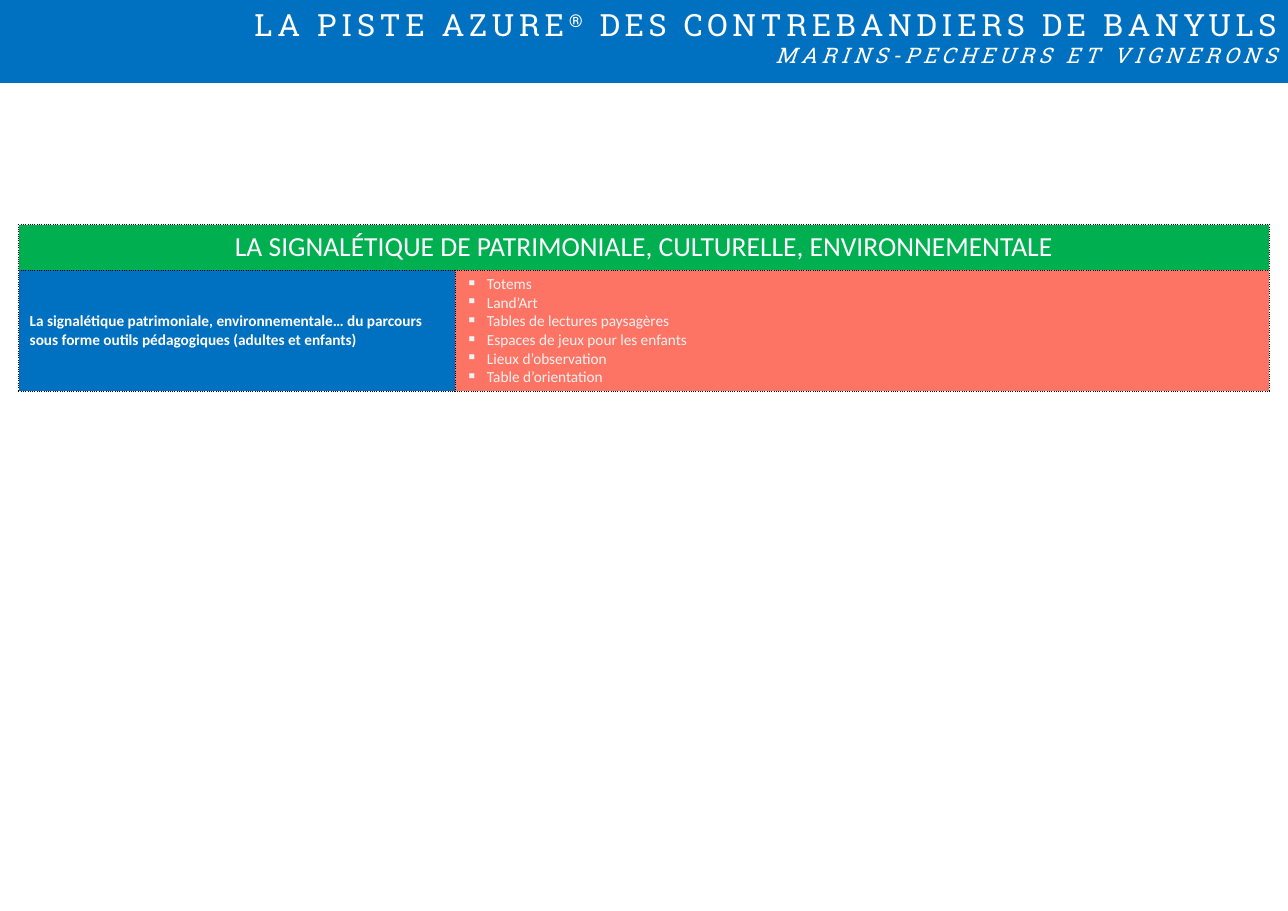
from dataclasses import dataclass

from lxml.etree import SubElement
from pptx import Presentation
from pptx.dml.color import RGBColor
from pptx.enum.text import MSO_ANCHOR as Anchor, MSO_AUTO_SIZE as AutoSize, PP_ALIGN as Align
from pptx.oxml import parse_xml
from pptx.oxml.ns import nsdecls, qn
from pptx.slide import Slide
from pptx.table import _Cell as Cell
from pptx.text.text import _Paragraph as Paragraph
from pptx.util import Inches, Pt

WHITE = RGBColor(0xFF, 0xFF, 0xFF)
PALE = RGBColor(0xF2, 0xF2, 0xF2)
BLACK = RGBColor(0x00, 0x00, 0x00)
BLUE = RGBColor(0x00, 0x70, 0xC0)
GREEN = RGBColor(0x00, 0xB0, 0x50)
CORAL = RGBColor(0xFE, 0x74, 0x64)

BODY_FONT = "Calibri"
BANNER_FONT = "Roboto Slab"

# The slide is a grid of 100 columns by 100 rows
WIDTH, HEIGHT = Inches(11.69), Inches(8.27)
COLUMN, ROW = WIDTH / 100, HEIGHT / 100
BANNER_ROWS = 8.1
TABLE_LEFT, TABLE_TOP = 1.45, 24.67
TABLE_COLUMNS = (33.88, 63.22)
TABLE_ROWS = (4.96, 13.3)
BULLET_INDENT = Inches(0.19)


@dataclass(frozen=True)
class BannerLine:
    spans: tuple[tuple[str, int], ...]  # text and baseline shift in percent
    size: int
    italic: bool = False


@dataclass(frozen=True)
class CellContent:
    row: int
    column: int
    lines: tuple[str, ...]
    fill: RGBColor
    color: RGBColor = WHITE
    size: int = 10
    bold: bool = False
    align: Align = Align.LEFT
    anchor: Anchor = Anchor.MIDDLE
    bulleted: bool = False


BANNER = (
    BannerLine((("LA PISTE AZURE", 0), ("®", 30), (" DES CONTREBANDIERS DE BANYULS", 0)), 20),
    BannerLine((("MARINS-PECHEURS ET VIGNERONS", 0),), 14, italic=True),
)

CELLS = (
    CellContent(0, 0, ("LA SIGNALÉTIQUE DE PATRIMONIALE, CULTURELLE, ENVIRONNEMENTALE",),
                GREEN, size=18, align=Align.CENTER, anchor=Anchor.TOP),
    CellContent(1, 0, ("La signalétique patrimoniale, environnementale… du parcours "
                       "sous forme outils pédagogiques (adultes et enfants)",),
                BLUE, bold=True),
    CellContent(1, 1, ("Totems", "Land’Art", "Tables de lectures paysagères",
                       "Espaces de jeux pour les enfants", "Lieux d’observation",
                       "Table d’orientation"),
                CORAL, color=PALE, bulleted=True),
)


def style(para: Paragraph, name: str, size: int, color: RGBColor, align: Align,
          bold: bool = False, italic: bool = False) -> None:
    para.alignment = align
    font = para.font
    font.name, font.size, font.bold, font.italic = name, Pt(size), bold, italic
    font.color.rgb = color


def add_bullet(para: Paragraph) -> None:
    properties = para._p.get_or_add_pPr()
    properties.set("marL", str(BULLET_INDENT))
    properties.set("indent", str(-BULLET_INDENT))
    bullet = parse_xml(f'<a:buChar {nsdecls("a")} char="▪"/>')
    properties.insert(0, bullet)


def add_borders(cell: Cell) -> None:
    properties = cell._tc.get_or_add_tcPr()
    for index, side in enumerate(("lnL", "lnR", "lnT", "lnB")):
        line = parse_xml(f'<a:{side} {nsdecls("a")} w="{Pt(0.5)}"/>')
        fill = SubElement(line, qn("a:solidFill"))
        SubElement(fill, qn("a:srgbClr"), val=str(BLACK))
        SubElement(line, qn("a:prstDash"), val="sysDot")
        properties.insert(index, line)


def fill_cell(cell: Cell, content: CellContent) -> None:
    cell.fill.solid()
    cell.fill.fore_color.rgb = content.fill
    cell.vertical_anchor = content.anchor
    cell.text_frame.text = "\n".join(content.lines)
    for para in cell.text_frame.paragraphs:
        style(para, BODY_FONT, content.size, content.color, content.align, content.bold)
        if content.bulleted:
            add_bullet(para)


def draw_banner(page: Slide) -> None:
    banner = page.shapes.title
    banner.left, banner.top = 0, 0
    banner.width, banner.height = WIDTH, round(BANNER_ROWS * ROW)
    banner.fill.solid()
    banner.fill.fore_color.rgb = BLUE
    frame = banner.text_frame
    frame.word_wrap = True
    frame.auto_size = AutoSize.SHAPE_TO_FIT_TEXT
    frame.vertical_anchor = Anchor.MIDDLE
    for index, line in enumerate(BANNER):
        para = frame.add_paragraph() if index else frame.paragraphs[0]
        style(para, BANNER_FONT, line.size, WHITE, Align.RIGHT, italic=line.italic)
        for text, baseline in line.spans:
            span = para.add_run()
            span.text = text
            properties = span._r.get_or_add_rPr()
            properties.set("spc", "300")
            properties.set("baseline", str(baseline * 1000))


def draw_table(page: Slide) -> None:
    frame = page.shapes.add_table(
        len(TABLE_ROWS), len(TABLE_COLUMNS),
        round(TABLE_LEFT * COLUMN), round(TABLE_TOP * ROW),
        round(sum(TABLE_COLUMNS) * COLUMN), round(sum(TABLE_ROWS) * ROW))
    table = frame.table
    table.first_row = table.horz_banding = False
    for column, share in zip(table.columns, TABLE_COLUMNS):
        column.width = round(share * COLUMN)
    for row, share in zip(table.rows, TABLE_ROWS):
        row.height = round(share * ROW)
    table.cell(0, 0).merge(table.cell(0, 1))
    for content in CELLS:
        fill_cell(table.cell(content.row, content.column), content)
    for cell in table.iter_cells():
        add_borders(cell)


def main() -> None:
    deck = Presentation()
    deck.slide_width, deck.slide_height = WIDTH, HEIGHT
    title_only = deck.slide_layouts[5]
    page = deck.slides.add_slide(title_only)
    draw_table(page)
    draw_banner(page)
    deck.save("out.pptx")


if __name__ == "__main__":
    main()
